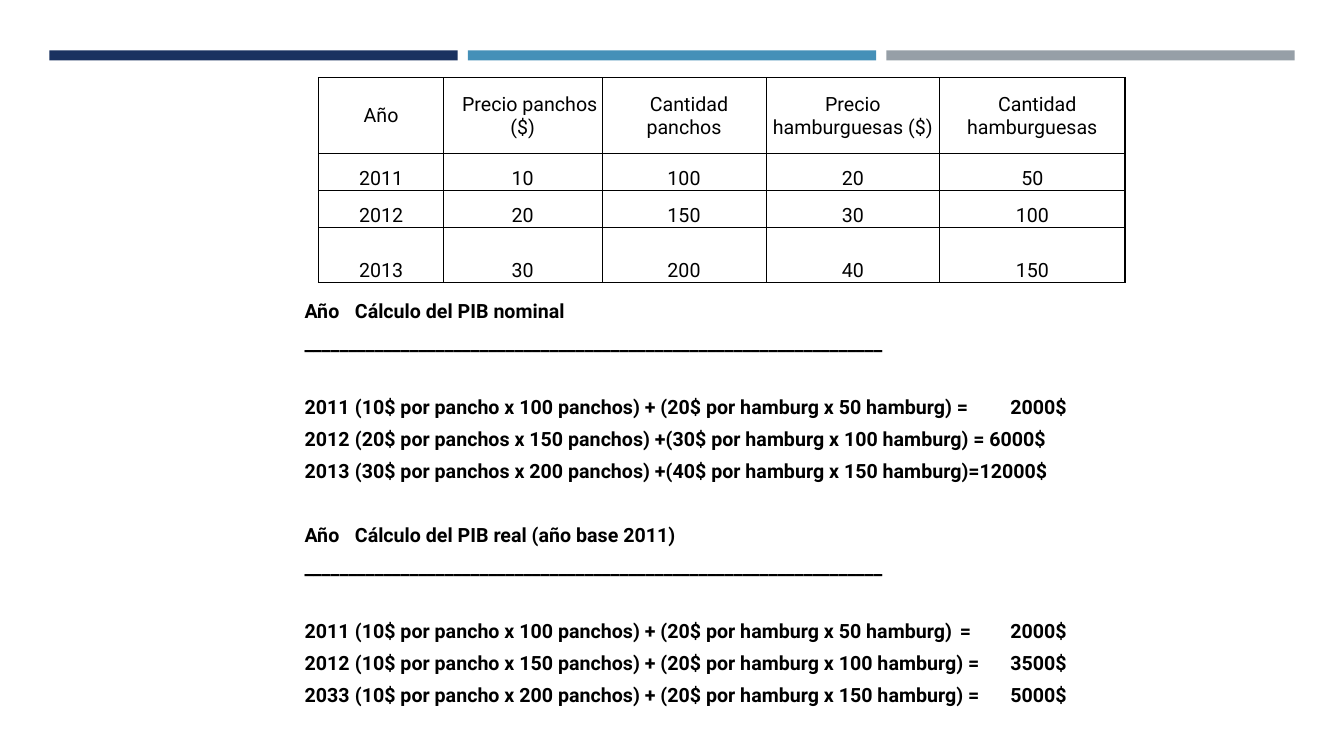
import pptx
import pptx.util
import pptx.dml.color
import pptx.enum.shapes
import pptx.enum.text
import pptx.oxml
import pptx.oxml.ns

Inches, Pt = pptx.util.Inches, pptx.util.Pt
FONT, SIZE = "Roboto", 14
COLORS = {"navy": "1A3260", "blue": "4590B8", "gray": "969FA7", "text": "000000"}

# Content
HEADERS = [("Año", 0), ("Precio panchos ($)", 0.14), ("Cantidad panchos", 0.1),
           ("Precio hamburguesas ($)", 0), ("Cantidad hamburguesas", 0.1)]
PRICES = [(2011, 10, 100, 20, 50), (2012, 20, 150, 30, 100), (2013, 30, 200, 40, 150)]
COLUMN_WIDTHS = [1.24, 1.57, 1.63, 1.72, 1.84]
ROW_HEIGHTS = [0.75, 0.37, 0.37, 0.54]
SECTIONS = [
    {"heading": "Año\tCálculo del PIB nominal", "tabs": [0.64, 6.87], "lines": [
        "2011\t(10$ por pancho x 100 panchos) + (20$ por hamburg x 50 hamburg) =\t2000$",
        "2012\t(20$ por panchos x 150 panchos) +(30$ por hamburg x 100 hamburg) = 6000$",
        "2013\t(30$ por panchos x 200 panchos) +(40$ por hamburg x 150 hamburg)=12000$"]},
    {"heading": "Año\tCálculo del PIB real (año base 2011)", "tabs": [0.59, 6.67, 6.88], "lines": [
        "2011\t(10$ por pancho x 100 panchos) + (20$ por hamburg x 50 hamburg)\t=\t2000$",
        "2012\t(10$ por pancho x 150 panchos) + (20$ por hamburg x 100 hamburg) =\t3500$",
        "2033\t(10$ por pancho x 200 panchos) + (20$ por hamburg x 150 hamburg) =\t5000$"]},
]
HEADING_TAB = 3.31
NORMAL_GAP, WIDE_GAP = 6, 28.8


def color(name):
    return pptx.dml.color.RGBColor.from_string(COLORS[name])


def add_xml(parent, markup):
    namespace = pptx.oxml.ns.nsdecls("a")
    parent.append(pptx.oxml.parse_xml(markup.replace(">", f" {namespace}>", 1)))


def style_text(para, bold):
    for span in para.runs:
        span.font.name, span.font.size, span.font.bold = FONT, Pt(SIZE), bold
        span.font.color.rgb = color("text")


def set_indent(para, first_line):
    properties = para._p.get_or_add_pPr()
    properties.set("marL", "0")
    properties.set("indent", str(Inches(first_line)))
    return properties


def add_bars(page):
    for index, name in enumerate(["navy", "blue", "gray"]):
        bar = page.shapes.add_shape(pptx.enum.shapes.MSO_SHAPE.RECTANGLE,
                                    Inches(0.49 + 4.15 * index), Inches(0.5),
                                    Inches(4.05), Inches(0.1))
        bar.shadow.inherit = False
        bar.fill.solid()
        bar.fill.fore_color.rgb = color(name)
        bar.line.fill.background()


def add_calculations(page):
    box = page.placeholders[1]
    box.left, box.top, box.width, box.height = map(Inches, (2.83, 2.92, 8.83, 4.32))
    frame = box.text_frame
    frame.word_wrap = True
    frame.auto_size = pptx.enum.text.MSO_AUTO_SIZE.NONE
    frame.vertical_anchor = pptx.enum.text.MSO_ANCHOR.TOP
    frame.margin_left = Inches(0.19)

    # Each row: wording, space before, tab stops
    rows = []
    for section in SECTIONS:
        rows.append((section["heading"], WIDE_GAP if rows else NORMAL_GAP, [HEADING_TAB]))
        rows.append(("_" * 66, NORMAL_GAP, []))
        for index, line in enumerate(section["lines"]):
            rows.append((line, NORMAL_GAP if index else WIDE_GAP, section["tabs"]))

    frame.text = "\n".join(row[0] for row in rows)
    for para, (_, gap, tabs) in zip(frame.paragraphs, rows):
        para.space_before, para.space_after, para.line_spacing = Pt(gap), Pt(0), 1.0
        properties = set_indent(para, 0)
        add_xml(properties, "<a:buNone></a:buNone>")
        if tabs:
            stops = "".join(f'<a:tab pos="{Inches(tab)}" algn="l"/>' for tab in tabs)
            add_xml(properties, f"<a:tabLst>{stops}</a:tabLst>")
        style_text(para, True)


def add_borders(cell, row, column):
    outer = {"L": column == 0, "R": column == len(HEADERS) - 1,
             "T": row == 0, "B": row == len(PRICES)}
    properties = cell._tc.get_or_add_tcPr()
    for side, is_outer in outer.items():
        width = Pt(1 if is_outer else 0.5)
        add_xml(properties, f'<a:ln{side} w="{width}"><a:solidFill><a:srgbClr '
                            f'val="{COLORS["text"]}"/></a:solidFill></a:ln{side}>')


def add_price_table(page):
    rows = [HEADERS] + [[(str(value), 0) for value in values] for values in PRICES]
    table = page.shapes.add_table(len(rows), len(HEADERS), Inches(3.16), Inches(0.77),
                                  Inches(sum(COLUMN_WIDTHS)), Inches(sum(ROW_HEIGHTS))).table
    table.first_row = table.horz_banding = False
    for column, width in zip(table.columns, COLUMN_WIDTHS):
        column.width = Inches(width)
    for row, height in zip(table.rows, ROW_HEIGHTS):
        row.height = Inches(height)
    anchor = pptx.enum.text.MSO_ANCHOR
    for r, row in enumerate(rows):
        for c, (wording, indent) in enumerate(row):
            cell = table.cell(r, c)
            cell.text = wording
            cell.vertical_anchor = anchor.BOTTOM if r else anchor.MIDDLE
            cell.margin_left = cell.margin_right = cell.margin_top = Inches(0.01)
            cell.margin_bottom = 0
            para = cell.text_frame.paragraphs[0]
            para.alignment = pptx.enum.text.PP_ALIGN.CENTER
            set_indent(para, indent)
            style_text(para, False)
            add_borders(cell, r, c)
            cell.fill.background()


def main():
    deck = pptx.Presentation()
    deck.slide_width, deck.slide_height = Inches(13.33), Inches(7.5)
    page = deck.slides.add_slide(deck.slide_layouts[1])
    title = page.shapes.title.element
    title.getparent().remove(title)
    add_bars(page)
    add_calculations(page)
    add_price_table(page)
    deck.save("out.pptx")


if __name__ == "__main__":
    main()
